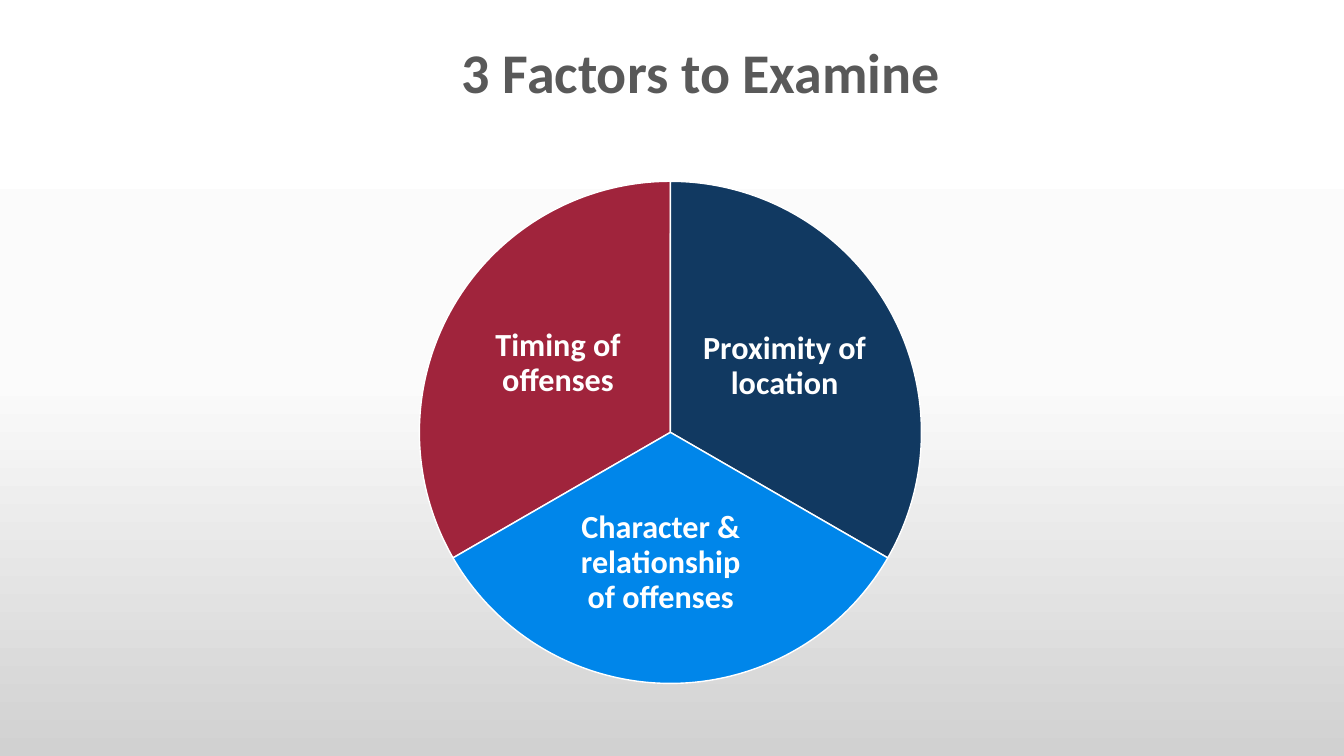
from copy import deepcopy
from dataclasses import dataclass

from pptx import Presentation
from pptx.dml.color import RGBColor
from pptx.enum.shapes import MSO_SHAPE
from pptx.enum.text import MSO_ANCHOR, PP_ALIGN
from pptx.oxml.ns import qn
from pptx.util import Cm, Pt

PIE = MSO_SHAPE.PIE
MIDDLE = MSO_ANCHOR.MIDDLE
CENTER = PP_ALIGN.CENTER


@dataclass(frozen=True)
class Theme:
    font: str = "Calibri"
    title: str = "595959"
    white: str = "FFFFFF"
    red: str = "A0243C"
    navy: str = "113961"
    blue: str = "0086EA"
    back: tuple = ((0, "FFFFFF"), (0.5, "FBFBFB"), (1, "D1D1D1"))
    head_size: int = 40
    label_size: int = 23
    edge: int = 1


THEME = Theme()
FACTORS = (
    ("Timing of offenses", THEME.red, -2.83, -1.73),
    ("Proximity of location", THEME.navy, 2.88, -1.65),
    ("Character & relationship of offenses", THEME.blue, -0.24, 3.3),
)


def rgb(code):
    return RGBColor.from_string(code)


def add_text(slide, box, text, size, color, inset):
    frame = slide.shapes.add_textbox(*map(Cm, box)).text_frame
    frame.word_wrap = True
    frame.vertical_anchor = MIDDLE
    frame.margin_left = frame.margin_right = Cm(inset)
    frame.margin_top = frame.margin_bottom = Cm(inset)
    para = frame.paragraphs[0]
    para.alignment = CENTER
    para.line_spacing = 0.9
    run = para.add_run()
    run.text = text
    font = run.font
    font.name = THEME.font
    font.size = Pt(size)
    font.bold = True
    font.color.rgb = rgb(color)


def paint_back(slide):
    fill = slide.background.fill
    fill.gradient()
    fill.gradient_angle = 270
    stops = slide.element.find(".//" + qn("a:gsLst"))
    stops.append(deepcopy(stops[0]))
    for stop, (place, color) in zip(fill.gradient_stops, THEME.back):
        stop.position = place
        stop.color.rgb = rgb(color)


def add_head(slide, box):
    add_text(slide, box, "3 Factors to Examine", THEME.head_size, THEME.title, 0.2)


def add_wheel(slide, box):
    left, top, width, height = box
    wide, high = 4.29, 4.22
    turn = 360 / len(FACTORS)
    for rank, (text, color, dx, dy) in enumerate(FACTORS):
        wedge = slide.shapes.add_shape(PIE, *map(Cm, box))
        wedge.adjustments[0] = 90
        wedge.adjustments[1] = 162
        wedge.rotation = rank * turn
        wedge.shadow.inherit = False
        wedge.fill.solid()
        wedge.fill.fore_color.rgb = rgb(color)
        wedge.line.color.rgb = rgb(THEME.white)
        wedge.line.width = Pt(THEME.edge)
        label = (
            left + (width - wide) / 2 + dx,
            top + (height - high) / 2 + dy,
            wide,
            high,
        )
        add_text(slide, label, text, THEME.label_size, THEME.white, 0.08)


def main():
    deck = Presentation()
    deck.slide_width = Cm(33.87)
    deck.slide_height = Cm(19.05)
    slide = deck.slides.add_slide(deck.slide_layouts[6])
    paint_back(slide)
    add_head(slide, (3.06, 0.05, 29.21, 3.68))
    add_wheel(slide, (10.57, 4.57, 12.65, 12.65))
    deck.save("out.pptx")


if __name__ == "__main__":
    main()
